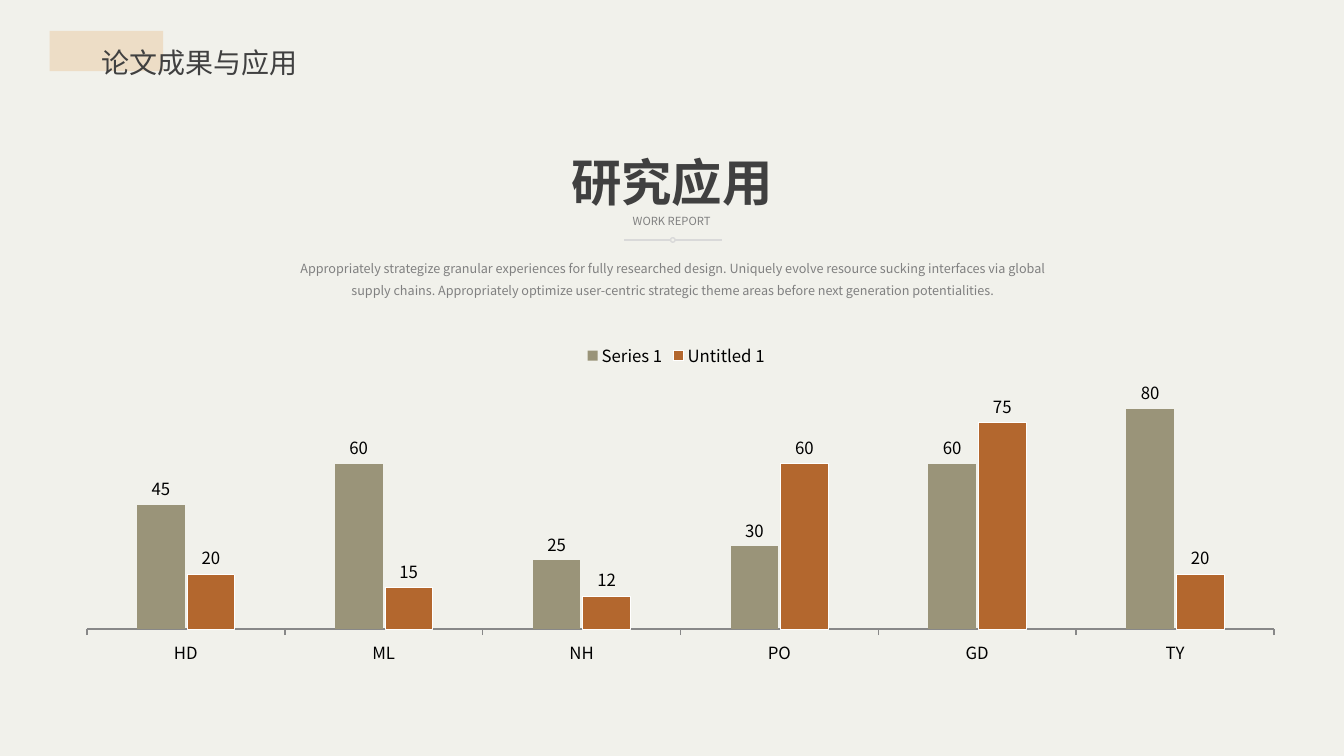
from lxml.etree import SubElement
from pptx import Presentation
from pptx.chart.data import CategoryChartData
from pptx.dml.color import RGBColor
from pptx.enum.chart import (XL_CHART_TYPE, XL_LABEL_POSITION, XL_LEGEND_POSITION,
                             XL_TICK_LABEL_POSITION, XL_TICK_MARK)
from pptx.enum.shapes import MSO_CONNECTOR, MSO_SHAPE
from pptx.enum.text import MSO_AUTO_SIZE, PP_ALIGN
from pptx.oxml.ns import qn
from pptx.util import Pt

FONT = "Noto Sans CJK SC"
BACKGROUND = RGBColor(0xF1, 0xF1, 0xEB)
SAND = RGBColor(0xED, 0xDD, 0xC6)
DARK = RGBColor(0x40, 0x40, 0x40)
GRAY = RGBColor(0x80, 0x80, 0x80)
PALE = RGBColor(0xD9, 0xD9, 0xD9)
AXIS = RGBColor(0x88, 0x88, 0x88)
OLIVE = RGBColor(0x9A, 0x94, 0x79)
RUST = RGBColor(0xB3, 0x67, 0x2E)
BLACK = RGBColor(0, 0, 0)
WHITE = RGBColor(0xFF, 0xFF, 0xFF)


def set_font(font, size, color, properties):
    """Style a font; properties is its XML element, which also takes the East Asian face."""
    font.size = Pt(size)
    font.color.rgb = color
    font.name = FONT
    latin = properties.find(".//" + qn("a:latin"))
    east_asian = SubElement(latin.getparent(), qn("a:ea"), typeface=FONT)
    latin.addnext(east_asian)


def add_text(slide, box, text, size, color, alignment=PP_ALIGN.CENTER):
    text_box = slide.shapes.add_textbox(*[Pt(length) for length in box])
    text_box.text_frame.word_wrap = True
    text_box.text_frame.auto_size = MSO_AUTO_SIZE.SHAPE_TO_FIT_TEXT
    paragraph = text_box.text_frame.paragraphs[0]
    paragraph.text = text
    paragraph.alignment = alignment
    set_font(paragraph.font, size, color, paragraph._p)
    return paragraph


presentation = Presentation()
presentation.slide_width = Pt(960)
presentation.slide_height = Pt(540)
slide = presentation.slides.add_slide(presentation.slide_layouts[6])
slide.background.fill.solid()
slide.background.fill.fore_color.rgb = BACKGROUND

# Page title
title_block = slide.shapes.add_shape(MSO_SHAPE.RECTANGLE, Pt(35.5), Pt(22), Pt(81), Pt(28.8))
title_block.shadow.inherit = False
title_block.fill.solid()
title_block.fill.fore_color.rgb = SAND
title_block.line.fill.background()
page_title = add_text(slide, (65.5, 17.3, 252, 39.6), "论文成果与应用", 20, DARK, PP_ALIGN.JUSTIFY)
page_title.line_spacing = 1.5

# Introduction
introduction = add_text(
    slide, (193.7, 177.1, 573.1, 38.2),
    "Appropriately strategize granular experiences for fully researched design. "
    "Uniquely evolve resource sucking interfaces via global supply chains. "
    "Appropriately optimize user-centric strategic theme areas before next generation "
    "potentialities.", 9, GRAY)
introduction.line_spacing = 1.5
introduction.space_before = Pt(1.8)

# Column chart
chart_data = CategoryChartData()
chart_data.categories = ["HD", "ML", "NH", "PO", "GD", "TY"]
chart_data.add_series("Series 1", (45, 60, 25, 30, 60, 80), "0")
chart_data.add_series("Untitled 1", (20, 15, 12, 60, 75, 20), "#,##0")
chart = slide.shapes.add_chart(XL_CHART_TYPE.COLUMN_CLUSTERED, Pt(51.8), Pt(236.9),
                               Pt(862.6), Pt(238.3), chart_data).chart
chart.has_title = False
set_font(chart.font, 12, BLACK, chart._chartSpace.find(qn("c:txPr")))
chart.has_legend = True
chart.legend.position = XL_LEGEND_POSITION.TOP
chart.legend.include_in_layout = False

category_axis = chart.category_axis
category_axis.tick_label_position = XL_TICK_LABEL_POSITION.LOW
category_axis.major_tick_mark = XL_TICK_MARK.OUTSIDE
category_axis.format.line.color.rgb = AXIS
category_axis.format.line.width = Pt(1)

value_axis = chart.value_axis
value_axis.minimum_scale = 0
value_axis.maximum_scale = 100
value_axis.major_unit = 20
value_axis.has_major_gridlines = False
value_axis.major_tick_mark = XL_TICK_MARK.NONE
value_axis.tick_label_position = XL_TICK_LABEL_POSITION.NONE
value_axis.format.line.fill.background()

plot = chart.plots[0]
plot.gap_width = 210
plot.overlap = -5
plot.vary_by_categories = False
for series, color, number_format in zip(plot.series, (OLIVE, RUST), ("0", "#,##0")):
    series.format.fill.solid()
    series.format.fill.fore_color.rgb = color
    labels = series.data_labels
    labels.show_value = True
    labels.position = XL_LABEL_POSITION.OUTSIDE_END
    labels.number_format = number_format
    labels.number_format_is_linked = False
plot.series[0].format.line.fill.background()
plot.series[1].format.line.color.rgb = WHITE
plot.series[1].format.line.width = Pt(0.5)

plot_area = chart._chartSpace.chart.plotArea
for old_layout in plot_area.findall(qn("c:layout")):
    plot_area.remove(old_layout)
layout = SubElement(plot_area, qn("c:layout"))
plot_area.insert(0, layout)
manual_layout = SubElement(layout, qn("c:manualLayout"))
for tag, value in (("layoutTarget", "inner"), ("xMode", "edge"), ("yMode", "edge"),
                   ("x", "0.012"), ("y", "0.066"), ("w", "0.983"), ("h", "0.826")):
    SubElement(manual_layout, qn("c:" + tag), val=value)

# Section heading
add_text(slide, (422.6, 149.8, 114.5, 17.3), "WORK REPORT", 8, GRAY)
heading = add_text(slide, (261.4, 104.4, 437, 51.1), "研究应用", 36, DARK)
heading.font.bold = True

# Divider: a ring between two lines
divider = slide.shapes.add_group_shape()
ring = divider.shapes.add_shape(MSO_SHAPE.OVAL, Pt(479), Pt(169.8), Pt(3.2), Pt(3.2))
ring.shadow.inherit = False
ring.fill.background()
ring.line.color.rgb = PALE
ring.line.width = Pt(1)
for start, end in ((445.8, 479), (482.2, 515.4)):
    line = divider.shapes.add_connector(MSO_CONNECTOR.STRAIGHT, Pt(start), Pt(171.4),
                                        Pt(end), Pt(171.4))
    line.line.color.rgb = PALE
    line.line.width = Pt(1)
    SubElement(line._element.spPr, qn("a:effectLst"))

presentation.save("out.pptx")
